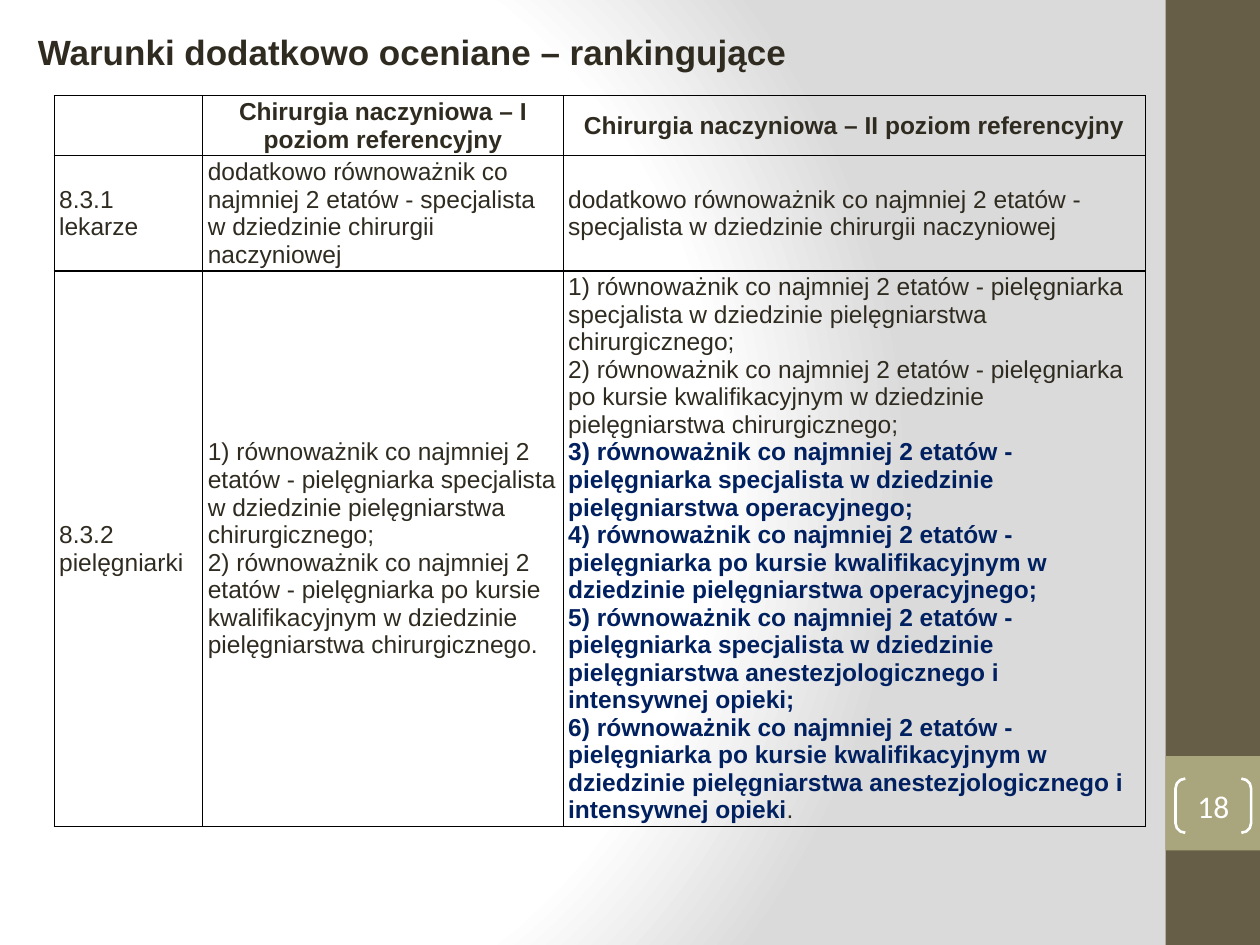
from dataclasses import dataclass

from pptx import Presentation, util as u
from pptx.dml.color import RGBColor
from pptx.enum import shapes, text
from pptx.oxml import parse_xml
from pptx.oxml.ns import nsdecls

DARK, NAVY, WHITE = "2F2B20", "002060", "FFFFFF"
BROWN, OLIVE = "675E47", "A9A57C"
LEFT, CENTER = text.PP_ALIGN.LEFT, text.PP_ALIGN.CENTER
MIDDLE = text.MSO_ANCHOR.MIDDLE


@dataclass
class Run:
    content: str
    color: str = DARK
    bold: bool = False


@dataclass
class Panel:
    left: float
    top: float
    width: float
    height: float
    color: str


def rgb(color: str) -> RGBColor:
    return RGBColor.from_string(color)


def write(paragraph, content: str, *, size: float, font: str = "Arial", color: str = DARK,
          bold: bool = False, align=LEFT) -> None:
    """Add formatted text; each newline becomes a line break."""
    paragraph.alignment = align
    for index, line in enumerate(content.split("\n")):
        if index:
            paragraph.add_line_break()
        if line:
            run = paragraph.add_run()
            run.text = line
            run.font.size = u.Pt(size)
            run.font.name = font
            run.font.bold = bold
            run.font.color.rgb = rgb(color)


def set_insets(target, horizontal: float, vertical: float) -> None:
    target.margin_left = target.margin_right = u.Inches(horizontal)
    target.margin_top = target.margin_bottom = u.Inches(vertical)


def set_background(slide) -> None:
    slide.background.fill.solid()
    properties = slide.element.xpath("./p:cSld/p:bg/p:bgPr")[0]
    stops = "".join(
        f'<a:gs pos="{position * 1000}"><a:srgbClr val="{color}"/></a:gs>'
        for position, color in ((0, WHITE), (75, WHITE), (100, "DADADA")))
    gradient = parse_xml(
        f'<a:gradFill {nsdecls("a")} rotWithShape="1"><a:gsLst>{stops}</a:gsLst>'
        '<a:path path="circle"><a:fillToRect l="20000" t="50000" r="100000" b="50000"/>'
        '</a:path></a:gradFill>')
    properties.replace(properties[0], gradient)


def add_panel(slide, panel: Panel) -> None:
    shape = slide.shapes.add_shape(
        shapes.MSO_SHAPE.RECTANGLE, u.Inches(panel.left), u.Inches(panel.top),
        u.Inches(panel.width), u.Inches(panel.height))
    shape.shadow.inherit = False
    shape.fill.solid()
    shape.fill.fore_color.rgb = rgb(panel.color)
    shape.line.fill.background()


def add_page_number(slide, number: str) -> None:
    shape = slide.shapes.add_shape(shapes.MSO_SHAPE.DOUBLE_BRACKET, u.Inches(9.33),
                                   u.Inches(6.18), u.Inches(0.6), u.Inches(0.43))
    shape.shadow.inherit = False
    shape.adjustments[0] = 0.18
    shape.fill.background()
    shape.line.color.rgb = rgb(WHITE)
    shape.line.width = u.Pt(1.5)
    frame = shape.text_frame
    set_insets(frame, 0, 0)
    frame.vertical_anchor = MIDDLE
    write(frame.paragraphs[0], number, size=18, font="Calibri", color=WHITE, align=CENTER)


def add_title(slide, content: str) -> None:
    title = slide.shapes.title
    title.left, title.top = u.Inches(0.2), u.Inches(0.24)
    title.width, title.height = u.Inches(8.33), u.Inches(0.55)
    frame = title.text_frame
    frame.word_wrap = True
    frame.auto_size = text.MSO_AUTO_SIZE.NONE
    frame.vertical_anchor = text.MSO_ANCHOR.TOP
    set_insets(frame, 0.1, 0)
    write(frame.paragraphs[0], content, size=20, bold=True)


def add_borders(cell) -> None:
    properties = cell._tc.get_or_add_tcPr()
    for index, side in enumerate(("lnL", "lnR", "lnT", "lnB")):
        properties.insert(index, parse_xml(
            f'<a:{side} {nsdecls("a")} w="{u.Pt(0.75)}"><a:solidFill>'
            f'<a:srgbClr val="000000"/></a:solidFill></a:{side}>'))


def add_criteria_table(slide, rows: list[list[list[Run]]]) -> None:
    widths, heights = (1.18, 2.86, 4.62), (0.41, 0.58, 3.55)
    table = slide.shapes.add_table(
        len(heights), len(widths), u.Inches(0.43), u.Inches(0.76),
        u.Inches(sum(widths)), u.Inches(sum(heights))).table
    table.first_row = table.horz_banding = False
    for column, width in zip(table.columns, widths):
        column.width = u.Inches(width)
    for row, height in zip(table.rows, heights):
        row.height = u.Inches(height)
    for row_index, row in enumerate(rows):
        for column_index, runs in enumerate(row):
            cell = table.cell(row_index, column_index)
            cell.fill.background()
            cell.vertical_anchor = MIDDLE
            set_insets(cell, 0.04, 0.02)
            add_borders(cell)
            for run in runs:
                write(cell.text_frame.paragraphs[0], run.content, size=14, color=run.color,
                      bold=run.bold, align=LEFT if row_index else CENTER)


# Wording shared by the criteria
EQUIVALENT = "równoważnik co najmniej 2 etatów - "
SPECIALIST = EQUIVALENT + "pielęgniarka specjalista w dziedzinie pielęgniarstwa "
COURSE = EQUIVALENT + "pielęgniarka po kursie kwalifikacyjnym w dziedzinie pielęgniarstwa "
DOCTORS = f"dodatkowo {EQUIVALENT}specjalista w dziedzinie chirurgii naczyniowej"
SURGICAL = f"1) {SPECIALIST}chirurgicznego;\n2) {COURSE}chirurgicznego"
INTENSIVE = "anestezjologicznego i intensywnej opieki"
EXTRA = (f"3) {SPECIALIST}operacyjnego;\n4) {COURSE}operacyjnego;\n"
         f"5) {SPECIALIST}{INTENSIVE};\n6) {COURSE}{INTENSIVE}")

ROWS = [
    [[], *([Run(f"Chirurgia naczyniowa – {level} poziom referencyjny", bold=True)]
           for level in ("I", "II"))],
    [[Run("8.3.1 lekarze")], [Run(DOCTORS)], [Run(DOCTORS)]],
    [[Run("8.3.2 pielęgniarki")], [Run(SURGICAL + ".")],
     [Run(SURGICAL + ";\n"), Run(EXTRA, NAVY, True), Run(".")]],
]


def main() -> None:
    presentation = Presentation()
    presentation.slide_width, presentation.slide_height = u.Inches(10), u.Inches(7.5)
    slide = presentation.slides.add_slide(presentation.slide_layouts[5])
    set_background(slide)

    # Side band with page number
    for panel in (Panel(9.25, 0, 0.75, 7.5, BROWN), Panel(9.25, 6, 0.75, 0.75, OLIVE)):
        add_panel(slide, panel)
    add_page_number(slide, "18")

    # Title and criteria
    add_title(slide, "Warunki dodatkowo oceniane – rankingujące")
    add_criteria_table(slide, ROWS)
    presentation.save("out.pptx")


if __name__ == "__main__":
    main()
